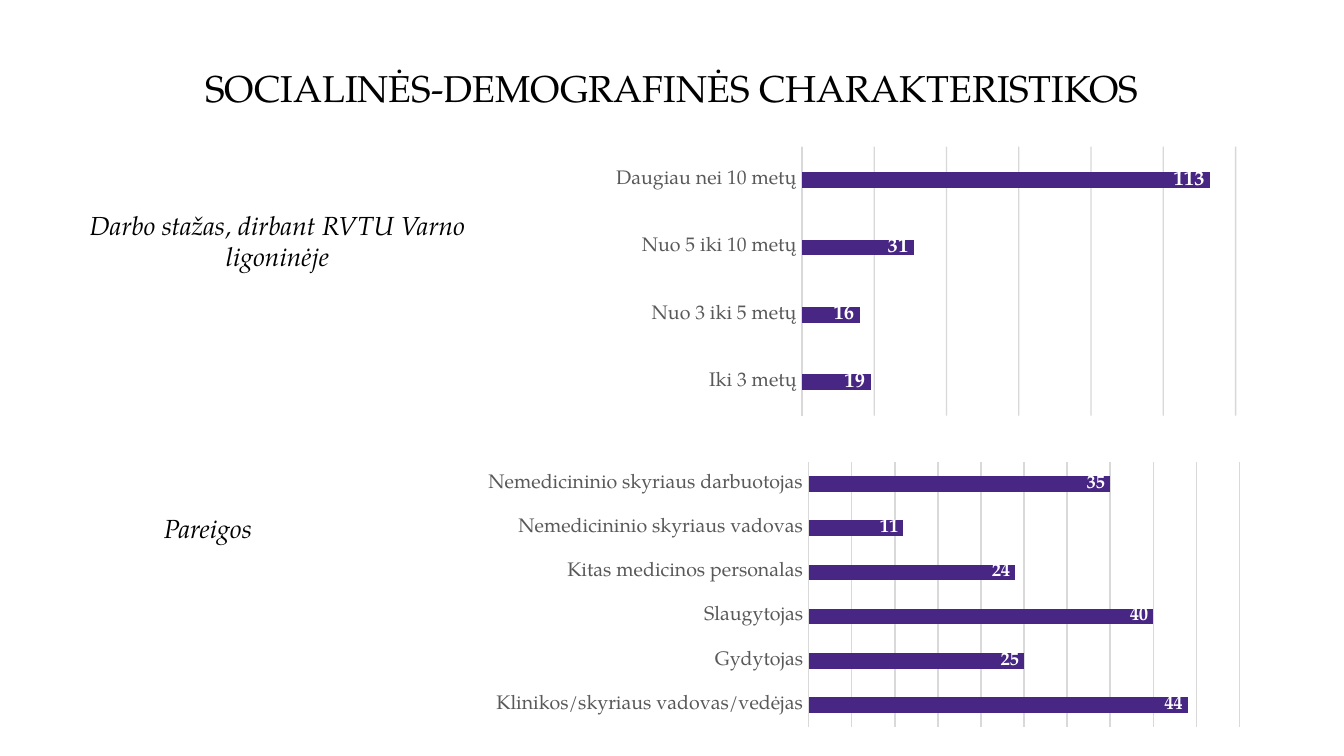
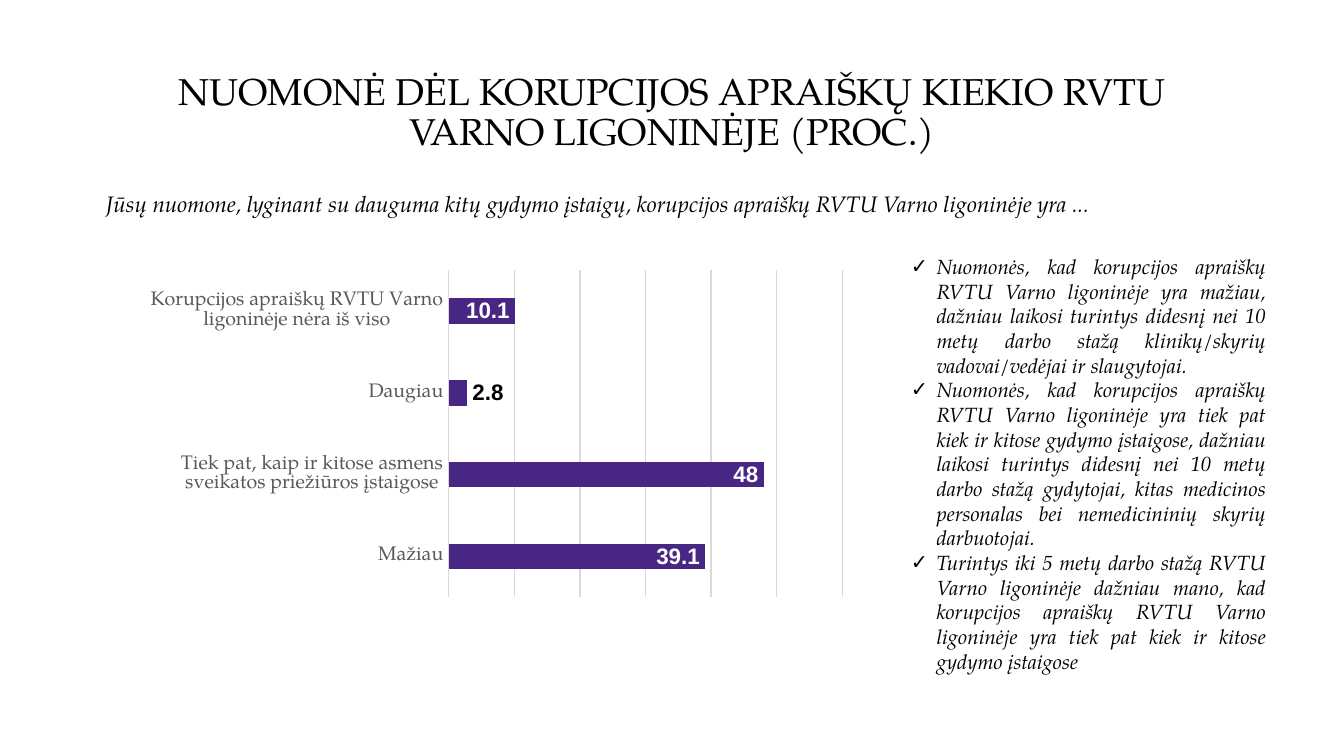
from lxml import etree
from pptx import Presentation
from pptx.chart.data import CategoryChartData
from pptx.dml.color import RGBColor
from pptx.enum.chart import XL_CHART_TYPE, XL_LABEL_POSITION, XL_TICK_MARK
from pptx.enum.shapes import MSO_SHAPE
from pptx.enum.text import MSO_ANCHOR, PP_ALIGN
from pptx.oxml.ns import qn
from pptx.util import Inches, Pt

BLACK = RGBColor(0x00, 0x00, 0x00)
WHITE = RGBColor(0xFF, 0xFF, 0xFF)
PURPLE = RGBColor(0x48, 0x26, 0x83)
GRAY = RGBColor(0x59, 0x59, 0x59)
PALE = RGBColor(0xD9, 0xD9, 0xD9)
SILVER = RGBColor(0xBF, 0xBF, 0xBF)

SERIF = "TeX Gyre Pagella"
SANS = "Arial"

BAR = XL_CHART_TYPE.BAR_CLUSTERED
IN_END = XL_LABEL_POSITION.INSIDE_END
OUT_END = XL_LABEL_POSITION.OUTSIDE_END
NO_TICK = XL_TICK_MARK.NONE
RECT = MSO_SHAPE.RECTANGLE
MIDDLE = MSO_ANCHOR.MIDDLE
LEFT, CENTER, JUSTIFY = PP_ALIGN.LEFT, PP_ALIGN.CENTER, PP_ALIGN.JUSTIFY

BODY_LEFT, BODY_WIDTH = 0.69, 8.62


def set_font(font, size, color, name=SERIF, bold=False, italic=False):
    font.name, font.size = name, Pt(size)
    font.bold, font.italic = bold, italic
    font.color.rgb = color


def add_text(slide, box, text, size, align=LEFT, italic=True, wrap=True):
    shape = slide.shapes.add_textbox(*map(Inches, box))
    frame = shape.text_frame
    frame.word_wrap = wrap
    para = frame.paragraphs[0]
    para.text, para.alignment = text, align
    set_font(para.font, size, BLACK, italic=italic)
    return frame


def add_title(slide, text, height):
    box = (BODY_LEFT, 0.3, BODY_WIDTH, height)
    frame = add_text(slide, box, text, 20, CENTER, italic=False)
    frame.vertical_anchor = MIDDLE
    frame.paragraphs[0].line_spacing = 0.9


def set_plot(chart, plot):
    """Fix the inner plot area, given in percent of the chart."""
    area = chart.element.find(".//" + qn("c:plotArea"))
    for old in area.findall(qn("c:layout")):
        area.remove(old)
    layout = etree.Element(qn("c:layout"))
    manual = etree.SubElement(layout, qn("c:manualLayout"))
    rules = [("layoutTarget", "inner"), ("xMode", "edge"), ("yMode", "edge")]
    rules += [(side, round(part / 100, 3)) for side, part in zip("xywh", plot)]
    for tag, value in rules:
        etree.SubElement(manual, qn("c:" + tag)).set("val", str(value))
    area.insert(0, layout)


def add_bars(slide, box, rows, plot, gap, top, step, size,
             name=SERIF, overlap=0, line=0.75, grid=PALE, alpha=100):
    data = CategoryChartData()
    data.categories = [label for label, _ in rows]
    data.add_series("Series 1", [value for _, value in rows])
    chart = slide.shapes.add_chart(BAR, *map(Inches, box), data).chart
    chart.has_legend = chart.has_title = False
    set_font(chart.font, 10, BLACK, SANS)
    set_plot(chart, plot)

    # Axes
    cats, vals = chart.category_axis, chart.value_axis
    cats.major_tick_mark = cats.minor_tick_mark = NO_TICK
    cats.has_major_gridlines = False
    set_font(cats.tick_labels.font, 10.5, GRAY)
    cats.format.line.color.rgb = PALE
    cats.format.line.width = Pt(line)
    vals.visible = False
    vals.minimum_scale, vals.maximum_scale, vals.major_unit = 0, top, step
    vals.has_major_gridlines = True
    rule = vals.major_gridlines.format.line
    rule.color.rgb, rule.width = grid, Pt(0.75)
    if alpha < 100:
        lines = chart.element.find(".//" + qn("c:majorGridlines"))
        tone = lines.find(".//" + qn("a:srgbClr"))
        etree.SubElement(tone, qn("a:alpha")).set("val", str(alpha * 1000))

    # Bars and their values
    bars = chart.plots[0]
    bars.gap_width, bars.overlap = gap, overlap
    bars.vary_by_categories = False
    fill = bars.series[0].format.fill
    fill.solid()
    fill.fore_color.rgb = PURPLE
    labels = bars.series[0].data_labels
    labels.show_value, labels.position = True, IN_END
    set_font(labels.font, size, WHITE, name, bold=True)
    return chart


def add_notes(slide, box, texts):
    """White panel with check-marked remarks."""
    panel = slide.shapes.add_shape(RECT, *map(Inches, box))
    panel.shadow.inherit = False
    panel.fill.solid()
    panel.fill.fore_color.rgb = WHITE
    panel.line.fill.background()
    frame = panel.text_frame
    frame.word_wrap, frame.vertical_anchor = True, MIDDLE
    for i, text in enumerate(texts):
        para = frame.add_paragraph() if i else frame.paragraphs[0]
        para.text, para.alignment = text, JUSTIFY
        set_font(para.font, 11, BLACK, italic=True)
        props = para._p.get_or_add_pPr()
        props.set("marL", str(Inches(0.19)))
        props.set("indent", str(-Inches(0.19)))
        props.insert(0, etree.Element(qn("a:buFont"), typeface=SANS))
        props.insert(1, etree.Element(qn("a:buChar"), char="✓"))


def build_staff(slide):
    add_title(slide, "SOCIALINĖS-DEMOGRAFINĖS CHARAKTERISTIKOS", 0.74)

    # Length of service
    add_text(slide, (0.18, 1.51, 3.77, 0.57),
             "Darbo stažas, dirbant RVTU Varno ligoninėje", 14, CENTER)
    years = [("Iki 3 metų", 19), ("Nuo 3 iki 5 metų", 16),
             ("Nuo 5 iki 10 metų", 31), ("Daugiau nei 10 metų", 113)]
    add_bars(slide, (3.8, 1.04, 5.72, 2.14), years, (37.9, 2.4, 56.4, 93.6),
             gap=329, top=120, step=20, size=11, overlap=-60, line=1.5,
             grid=SILVER, alpha=60)

    # Positions held
    add_text(slide, (1.12, 3.76, 0.88, 0.34), "Pareigos", 14, wrap=False)
    jobs = [("Klinikos/skyriaus vadovas/vedėjas", 44), ("Gydytojas", 25),
            ("Slaugytojas", 40), ("Kitas medicinos personalas", 24),
            ("Nemedicininio skyriaus vadovas", 11),
            ("Nemedicininio skyriaus darbuotojas", 35)]
    add_bars(slide, (2.59, 3.27, 6.72, 2.27), jobs, (51, 7.3, 47.7, 87.1),
             gap=182, top=50, step=5, size=10)


def build_views(slide):
    add_title(slide, "NUOMONĖ DĖL KORUPCIJOS APRAIŠKŲ KIEKIO RVTU "
              "VARNO LIGONINĖJE (PROC.)", 1.09)
    ask = add_text(slide, (BODY_LEFT, 1.39, BODY_WIDTH, 3.57),
                   "Jūsų nuomone, lyginant su dauguma kitų gydymo įstaigų, "
                   "korupcijos apraiškų RVTU Varno ligoninėje yra ...",
                   12, JUSTIFY)
    ask.paragraphs[0].line_spacing = 0.9

    # Share of answers
    views = [("Mažiau", 39.1),
             ("Tiek pat, kaip ir kitose asmens sveikatos priežiūros įstaigose",
              48),
             ("Daugiau", 2.8),
             ("Korupcijos apraiškų RVTU Varno ligoninėje nėra iš viso", 10.1)]
    chart = add_bars(slide, (0.78, 1.86, 5.6, 3.31), views,
                     (45.7, 4.6, 52.3, 73.5), gap=219, top=60, step=10,
                     size=12, name=SANS)
    small = chart.plots[0].series[0].points[2].data_label
    set_font(small.font, 12, BLACK, SANS, bold=True)
    small.position = OUT_END

    # Remarks
    add_notes(slide, (6.68, 1.84, 2.84, 3.22), [
        "Nuomonės, kad korupcijos apraiškų RVTU Varno ligoninėje yra mažiau, "
        "dažniau laikosi turintys didesnį nei 10 metų darbo stažą "
        "klinikų/skyrių vadovai/vedėjai ir slaugytojai.",
        "Nuomonės, kad korupcijos apraiškų RVTU Varno ligoninėje yra tiek pat "
        "kiek ir kitose gydymo įstaigose, dažniau laikosi turintys didesnį "
        "nei 10 metų darbo stažą gydytojai, kitas medicinos personalas bei "
        "nemedicininių skyrių darbuotojai.",
        "Turintys iki 5 metų darbo stažą RVTU Varno ligoninėje dažniau mano, "
        "kad korupcijos apraiškų RVTU Varno ligoninėje yra tiek pat kiek ir "
        "kitose gydymo įstaigose",
    ])


def main():
    deck = Presentation()
    deck.slide_width = Inches(10)
    deck.slide_height = deck.slide_width * 9 // 16
    for build in (build_staff, build_views):
        build(deck.slides.add_slide(deck.slide_layouts[6]))
    deck.save("out.pptx")


if __name__ == "__main__":
    main()
